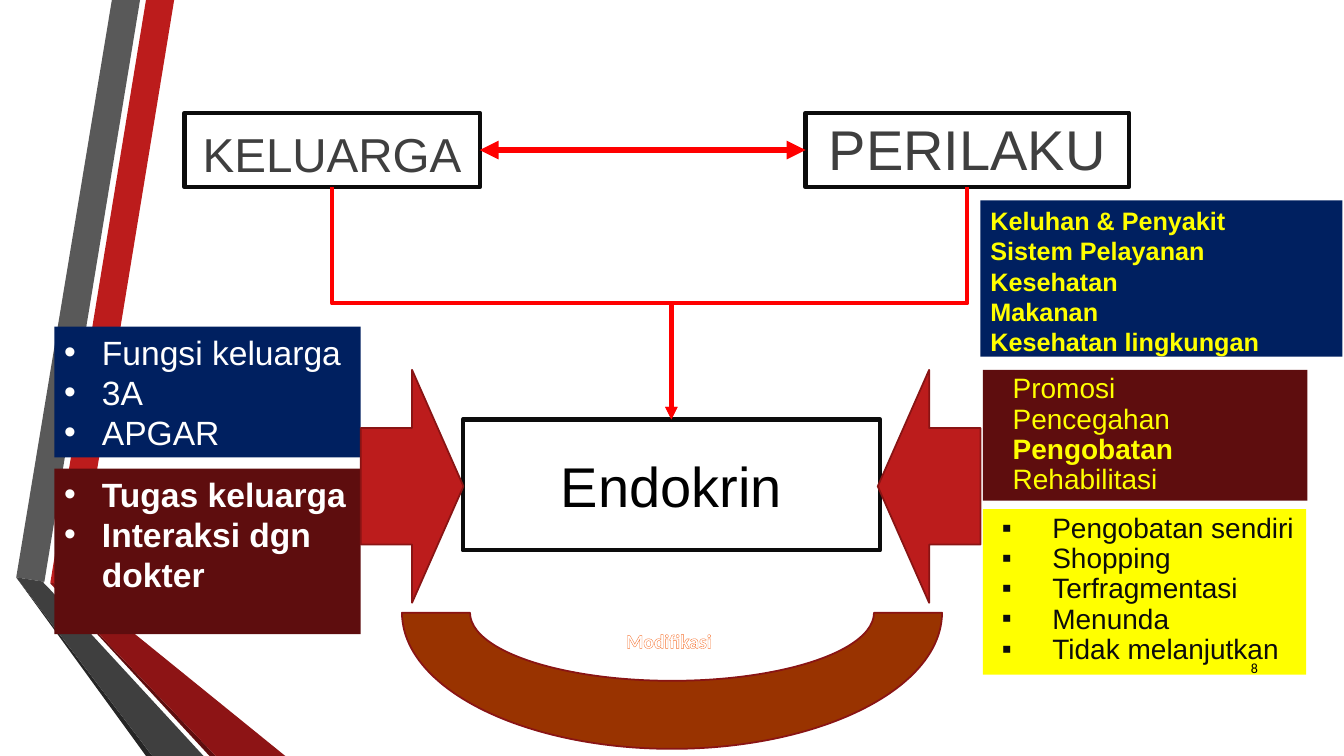
import pptx
import pptx.dml.color
import pptx.enum.shapes
import pptx.enum.text
import pptx.oxml
import pptx.oxml.ns
import pptx.util

Cm = pptx.util.Cm
Pt = pptx.util.Pt
MSO = pptx.enum.shapes.MSO_SHAPE
LINK = pptx.enum.shapes.MSO_CONNECTOR
ALIGN = pptx.enum.text.PP_ALIGN
ANCHOR = pptx.enum.text.MSO_ANCHOR
COLORS = {
    "red": "BC1C1C", "grey": "595959", "black": "262626", "maroon": "5E0D0E",
    "crimson": "8D1415", "charcoal": "3F3F3F", "ink": "0C0C0C", "text": "000000",
    "white": "FFFFFF", "link": "FF0000", "navy": "002060", "yellow": "FFFF00",
    "edge": "891414", "brown": "993300", "orange": "F67534",
}


def rgb(name):
    """Return the named colour."""
    return pptx.dml.color.RGBColor.from_string(COLORS[name])


def sub(parent, tag, **attrs):
    """Append a DrawingML element to a parent and return it."""
    el = pptx.oxml.parse_xml(f'<a:{tag} {pptx.oxml.ns.nsdecls("a")}/>')
    for key, value in attrs.items():
        el.set(key, str(value))
    parent.append(el)
    return el


def paint(sp, fill=None, line=None, width=1.25):
    """Set fill and outline of a shape and drop its shadow."""
    sp.shadow.inherit = False
    if fill:
        sp.fill.solid()
        sp.fill.fore_color.rgb = rgb(fill)
    else:
        sp.fill.background()
    if line:
        sp.line.color.rgb = rgb(line)
        sp.line.width = Pt(width)
    else:
        sp.line.fill.background()


def shape(s, kind, box, **look):
    """Add a painted preset shape in a box."""
    sp = s.shapes.add_shape(kind, *map(Cm, box))
    paint(sp, **look)
    return sp


def write(sp, lines, size, color, font="Arial", bold=False, bold_lines=(),
          anchor=ANCHOR.TOP, align=ALIGN.LEFT, spacing=None, bullet=None,
          margin=0, indent=0):
    """Fill a shape with one formatted paragraph per line."""
    tf = sp.text_frame
    tf.word_wrap = True
    tf.vertical_anchor = anchor
    for i, line in enumerate(lines):
        p = tf.add_paragraph() if i else tf.paragraphs[0]
        p.alignment = align
        if spacing:
            p.line_spacing = spacing
        pPr = p._p.get_or_add_pPr()
        pPr.set("marL", str(Cm(margin)))
        pPr.set("indent", str(Cm(indent)))
        if bullet:
            sub(pPr, "buFont", typeface="Arial")
            sub(pPr, "buChar", char=bullet)
        r = p.add_run()
        r.text = line
        values = {"name": font, "size": Pt(size), "bold": bold or line in bold_lines}
        for key, value in values.items():
            setattr(r.font, key, value)
        r.font.color.rgb = rgb(color)


def style_link(cx, width, ends=("tailEnd",)):
    """Give a connector its red line and arrowheads."""
    cx.line.color.rgb = rgb("link")
    cx.line.width = Pt(width)
    for end in ends:
        sub(cx.line._get_or_add_ln(), end, type="triangle")
    sub(cx._element.spPr, "effectLst")


def ribbon(s, left, top):
    """Draw the folded ribbon along the left edge."""
    bands = [
        ("red", [(0.86, 14.68), (1.55, 14.81), (3.98, 0), (3.27, 0)]),
        ("grey", [(3.12, 0), (2.41, 0), (0, 14.55), (0.71, 14.66)]),
        ("black", [(0, 14.55), (3.27, 19.05), (3.43, 19.05)]),
        ("maroon", [(0.86, 14.7), (4.87, 19.05), (5.03, 19.05)]),
        ("crimson", [(0.86, 14.7), (5.03, 19.05), (6.78, 19.05), (1.55, 14.81), (0.86, 14.68)]),
        ("charcoal", [(4.72, 19.05), (0.81, 14.81), (0.68, 14.68), (0.71, 14.66),
                      (0, 14.55), (3.43, 19.05)]),
    ]
    for color, points in bands:
        pts = [(Cm(left + x), Cm(top + y)) for x, y in points]
        fb = s.shapes.build_freeform(*pts[0])
        fb.add_line_segments(pts[1:])
        paint(fb.convert_to_shape(), color)


def elbow(s, x1, y1, x2, y2):
    """Draw a bent arrow that leaves downwards and arrives from above."""
    drop, run = y2 - y1, abs(x2 - x1)
    mx, my = (x1 + x2) / 2, (y1 + y2) / 2
    cx = s.shapes.add_connector(LINK.ELBOW, Cm(mx - drop / 2), Cm(my - run / 2),
                                Cm(mx + drop / 2), Cm(my + run / 2))
    xfrm = cx._element.spPr.find(pptx.oxml.ns.qn("a:xfrm"))
    xfrm.set("rot", str((270 if x2 > x1 else 90) * 60000))
    if x2 > x1:
        xfrm.set("flipH", "1")
    style_link(cx, 3)


def flow(s, left, top):
    """Draw the three framed boxes and the links between them."""
    frames = [
        ("Endokrin", (7.01, 7.73, 10.52, 3.3), 40, "text", ANCHOR.MIDDLE, None),
        ("PERILAKU", (15.65, 0, 8.15, 1.88), 40, "charcoal", ANCHOR.BOTTOM, 0.9),
        ("KELUARGA", (0, 0, 7.44, 1.88), 34, "charcoal", ANCHOR.BOTTOM, None),
    ]
    boxes = {}
    for name, (x, y, w, h), size, color, anchor, spacing in frames:
        sp = shape(s, MSO.RECTANGLE, (left + x, top + y, w, h), line="ink", width=3)
        write(sp, [name], size, color, anchor=anchor, align=ALIGN.CENTER, spacing=spacing)
        boxes[name] = sp
    goal = boxes["Endokrin"]
    for name in ("KELUARGA", "PERILAKU"):
        sp = boxes[name]
        elbow(s, (sp.left + sp.width / 2) / Cm(1), (sp.top + sp.height) / Cm(1),
              (goal.left + goal.width / 2) / Cm(1), goal.top / Cm(1))
    cx = s.shapes.add_connector(LINK.STRAIGHT, 0, 0, 0, 0)
    cx.begin_connect(boxes["KELUARGA"], 3)
    cx.end_connect(boxes["PERILAKU"], 1)
    style_link(cx, 4.5, ("headEnd", "tailEnd"))


def family_panels(s, left, top):
    """Draw the two bulleted panels on the left."""
    panels = [
        (0, 3.3, "navy", ["Fungsi keluarga", "3A", "APGAR"], False),
        (3.58, 4.17, "maroon", ["Tugas keluarga", "Interaksi dgn dokter"], True),
    ]
    for y, h, fill, lines, bold in panels:
        sp = shape(s, MSO.RECTANGLE, (left, top + y, 7.72, h), fill=fill)
        write(sp, lines, 24, "white", bold=bold, bullet="•", margin=0.95, indent=-0.95)


def behaviour_panels(s, left, top):
    """Draw the three panels on the right."""
    panels = [
        ((0, 0, 9.12, 3.94), "navy",
         ["Keluhan & Penyakit", "Sistem Pelayanan Kesehatan", "Makanan", "Kesehatan lingkungan"],
         {"size": 18, "color": "yellow", "bold": True}),
        ((0.06, 4.27, 8.18, 3.3), "maroon",
         ["Promosi", "Pencegahan", "Pengobatan", "Rehabilitasi"],
         {"size": 20, "color": "yellow", "bold_lines": ["Pengobatan"], "spacing": 0.9,
          "margin": 0.5}),
        ((0.06, 7.78, 8.15, 4.17), "yellow",
         ["Pengobatan sendiri", "Shopping", "Terfragmentasi", "Menunda", "Tidak melanjutkan"],
         {"size": 20, "color": "ink", "spacing": 0.9, "bullet": "▪", "margin": 1.5,
          "indent": -1.27}),
    ]
    for (x, y, w, h), fill, lines, look in panels:
        sp = shape(s, MSO.RECTANGLE, (left + x, top + y, w, h), fill=fill)
        write(sp, lines, **look)


def influences(s, left, top):
    """Draw the two block arrows, the arc below and its label."""
    for x, turn in ((0, 0), (13.03, 180)):
        sp = shape(s, MSO.RIGHT_ARROW, (left + x, top, 2.59, 5.87), fill="red", line="edge")
        sp.rotation = turn
    arc = shape(s, MSO.BLOCK_ARC, (left + 1.04, top + 2.69, 13.61, 6.86),
                fill="brown", line="edge")
    arc.rotation = 180
    label = s.shapes.add_textbox(*map(Cm, (left + 2.54, top + 6.4, 10.46, 2.31)))
    write(label, ["Modifikasi"], 14, "white", font="Calibri", bold=True, align=ALIGN.CENTER)
    rPr = label.text_frame.paragraphs[0].runs[0].font._element
    ln = sub(rPr, "ln", w=Pt(0.75))
    sub(sub(ln, "solidFill"), "srgbClr", val=COLORS["orange"])
    rPr.insert(0, ln)


def page_number(s, box):
    """Write the slide number."""
    sp = s.shapes.add_textbox(*map(Cm, box))
    write(sp, ["8"], 10, "text", font="Calibri", anchor=ANCHOR.MIDDLE, align=ALIGN.RIGHT)


def main():
    """Build the slide and save it."""
    prs = pptx.Presentation()
    prs.slide_width, prs.slide_height = Cm(33.87), Cm(19.05)
    s = prs.slides.add_slide(prs.slide_layouts[6])
    ribbon(s, 0.41, 0)
    flow(s, 4.65, 2.84)
    family_panels(s, 1.37, 8.23)
    behaviour_panels(s, 24.71, 5.05)
    influences(s, 9.09, 9.32)
    page_number(s, (30.43, 16.31, 1.52, 1.02))
    prs.save("out.pptx")


if __name__ == "__main__":
    main()
